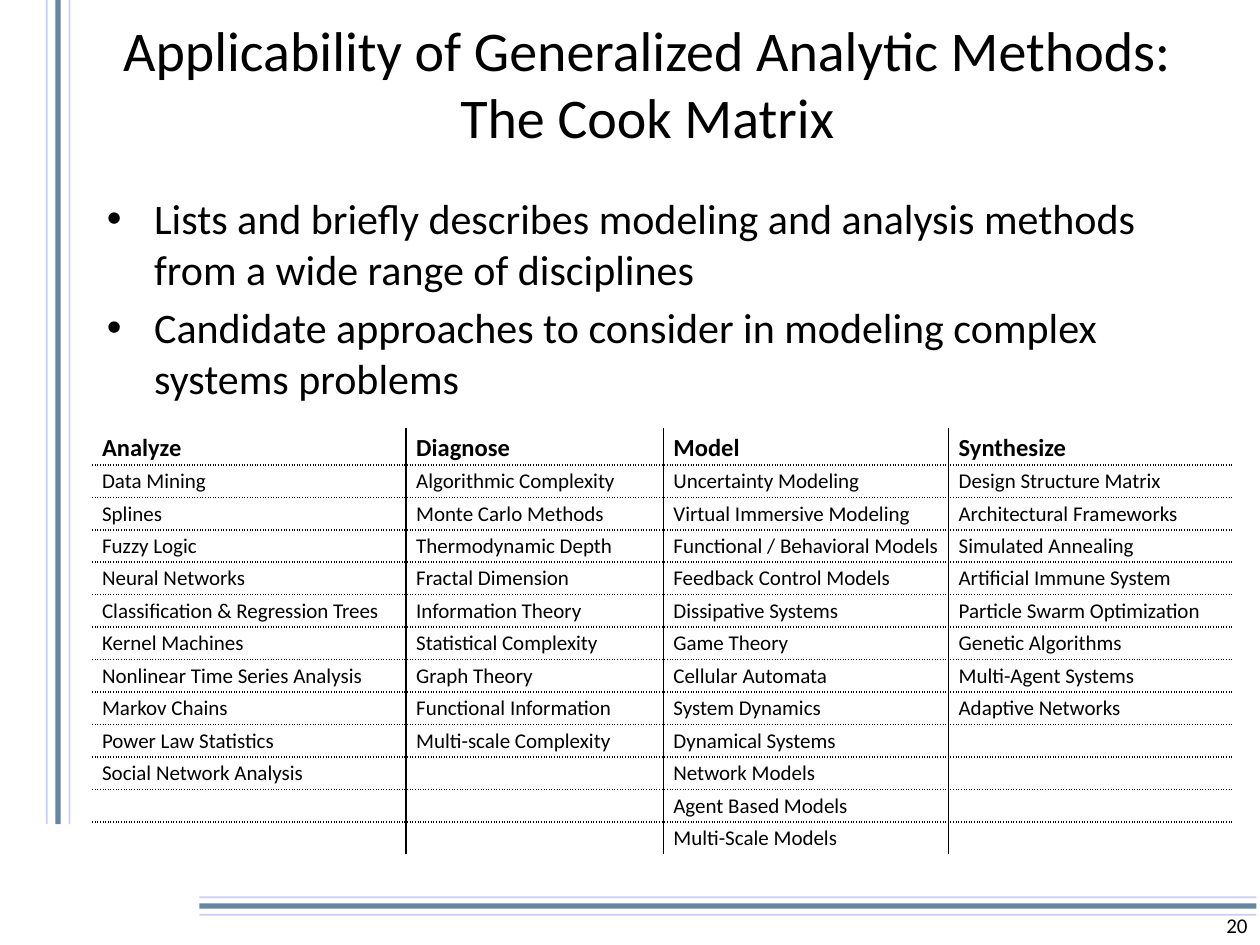
from itertools import zip_longest

from lxml import etree
from pptx import Presentation
from pptx.dml.color import RGBColor
from pptx.enum.shapes import MSO_CONNECTOR
from pptx.enum.text import MSO_ANCHOR, PP_ALIGN
from pptx.oxml.ns import qn
from pptx.util import Pt

LEFT, CENTER, RIGHT = PP_ALIGN.LEFT, PP_ALIGN.CENTER, PP_ALIGN.RIGHT
TOP, MIDDLE = MSO_ANCHOR.TOP, MSO_ANCHOR.MIDDLE
STRAIGHT = MSO_CONNECTOR.STRAIGHT

THEME = {
    "font": "Calibri", "text": "000000", "cell": "FFFFFF",
    "thin": ("9999FF", 1, 50), "thick": ("003366", 3, 60),
    "title": 32, "body": 24, "head": 14, "small": 12,
}


def write(tf, text, size, bold=False, align=LEFT, anchor=TOP, bullet=False,
          line=None, before=0, after=0):
    """Write each line of text as a paragraph; a vertical tab breaks a line."""
    tf.word_wrap = True
    tf.vertical_anchor = anchor
    for i, words in enumerate(text.split("\n")):
        p = tf.paragraphs[0] if i == 0 else tf.add_paragraph()
        p.text = words
        p.alignment = align
        if line:
            p.line_spacing = line
        if i and before:
            p.space_before = Pt(before)
        if after:
            p.space_after = Pt(after)
        if bullet:
            pPr = p._p.get_or_add_pPr()
            pPr.set("marL", str(Pt(27)))
            pPr.set("indent", str(-Pt(27)))
            etree.SubElement(pPr, qn("a:buFont"), typeface="Arial")
            etree.SubElement(pPr, qn("a:buChar"), char="•")
        for r in p.runs:
            r.font.name = THEME["font"]
            r.font.size = Pt(size)
            r.font.bold = bold
            r.font.color.rgb = RGBColor.from_string(THEME["text"])
        if not words:
            etree.SubElement(p._p, qn("a:endParaRPr"), sz=str(size * 100))


def border(cell, side, dash):
    """Draw one side of a cell: lnL, lnR, lnT or lnB."""
    ln = etree.SubElement(cell._tc.get_or_add_tcPr(), qn("a:" + side), w=str(Pt(1)))
    fill = etree.SubElement(ln, qn("a:solidFill"))
    etree.SubElement(fill, qn("a:srgbClr"), val=THEME["text"])
    etree.SubElement(ln, qn("a:prstDash"), val=dash)


prs = Presentation()
prs.slide_width, prs.slide_height = Pt(720), Pt(540)
s = prs.slides.add_slide(prs.slide_layouts[6])

# Rules at the left and bottom edges
rules = []
for offset, style in ((0, "thin"), (13, "thin"), (6.5, "thick")):
    rules.append((26.7 + offset, 0, 26.7 + offset, 471, style))
for offset, style in ((10, "thin"), (5, "thick"), (0, "thin")):
    rules.append((718, 512.7 + offset, 114, 512.7 + offset, style))
for x1, y1, x2, y2, style in rules:
    color, width, opacity = THEME[style]
    sp = s.shapes.add_connector(STRAIGHT, Pt(x1), Pt(y1), Pt(x2), Pt(y2))
    sp.line.width = Pt(width)
    sp.line.color.rgb = RGBColor.from_string(color)
    clr = sp._element.spPr.find(".//" + qn("a:srgbClr"))
    etree.SubElement(clr, qn("a:alpha"), val=str(opacity * 1000))
    etree.SubElement(sp._element.spPr, qn("a:effectLst"))

# Title, bullets and page number
sp = s.shapes.add_textbox(Pt(39), Pt(8.6), Pt(662), Pt(77))
write(sp.text_frame, "Applicability of Generalized Analytic Methods:\vThe Cook Matrix",
      THEME["title"], align=CENTER, anchor=MIDDLE)

sp = s.shapes.add_textbox(Pt(54), Pt(106.6), Pt(648), Pt(376))
write(sp.text_frame,
      "Lists and briefly describes modeling and analysis methods from a wide range of disciplines\n"
      "Candidate approaches to consider in modeling complex systems problems",
      THEME["body"], bullet=True, before=4.8)

sp = s.shapes.add_textbox(Pt(552), Pt(515.5), Pt(168), Pt(26))
write(sp.text_frame, "20", THEME["small"], align=RIGHT, anchor=MIDDLE)

# Matrix of methods, one list per column
methods = {
    "Analyze": [
        "Data Mining", "Splines", "Fuzzy Logic", "Neural Networks",
        "Classification & Regression Trees", "Kernel Machines",
        "Nonlinear Time Series Analysis", "Markov Chains",
        "Power Law Statistics", "Social Network Analysis"],
    "Diagnose": [
        "Algorithmic Complexity", "Monte Carlo Methods", "Thermodynamic Depth",
        "Fractal Dimension", "Information Theory", "Statistical Complexity",
        "Graph Theory", "Functional Information", "Multi-scale Complexity"],
    "Model": [
        "Uncertainty Modeling", "Virtual Immersive Modeling",
        "Functional / Behavioral Models", "Feedback Control Models",
        "Dissipative Systems", "Game Theory", "Cellular Automata",
        "System Dynamics", "Dynamical Systems", "Network Models",
        "Agent Based Models", "Multi-Scale Models"],
    "Synthesize": [
        "Design Structure Matrix", "Architectural Frameworks",
        "Simulated Annealing", "Artificial Immune System",
        "Particle Swarm Optimization", "Genetic Algorithms",
        "Multi-Agent Systems", "Adaptive Networks"],
}
rows = [list(methods), *zip_longest(*methods.values(), fillvalue="")]
widths = [179.5, 147, 163, 163]
last_row, last_col = len(rows) - 1, len(widths) - 1

sp = s.shapes.add_table(len(rows), len(widths), Pt(52.6), Pt(244.3),
                        Pt(sum(widths)), Pt(244))
table = sp.table
table.first_row = table.horz_banding = False
# The plain table style has no grid of its own
sp._element.find(".//" + qn("a:tableStyleId")).text = "{2D5ABB26-0587-4C30-8999-92F81FD0307C}"
for column, width in zip(table.columns, widths):
    column.width = Pt(width)

for i, row in enumerate(rows):
    table.rows[i].height = Pt(18.55 if i else 21.4)
    for j, text in enumerate(row):
        cell = table.cell(i, j)
        cell.margin_left = cell.margin_right = Pt(5.75)
        cell.margin_top = cell.margin_bottom = 0
        if i == 0:
            write(cell.text_frame, text, THEME["head"], bold=True, line=1.15)
            cell.vertical_anchor = MIDDLE
        else:
            write(cell.text_frame, text, THEME["small"], line=1.15, after=3)
        # Solid lines between columns, dotted lines between rows
        if j > 0:
            border(cell, "lnL", "solid")
        if j < last_col:
            border(cell, "lnR", "solid")
        if i > 0:
            border(cell, "lnT", "sysDot")
        if i < last_row:
            border(cell, "lnB", "sysDot")
        cell.fill.solid()
        cell.fill.fore_color.rgb = RGBColor.from_string(THEME["cell"])

prs.save("out.pptx")
